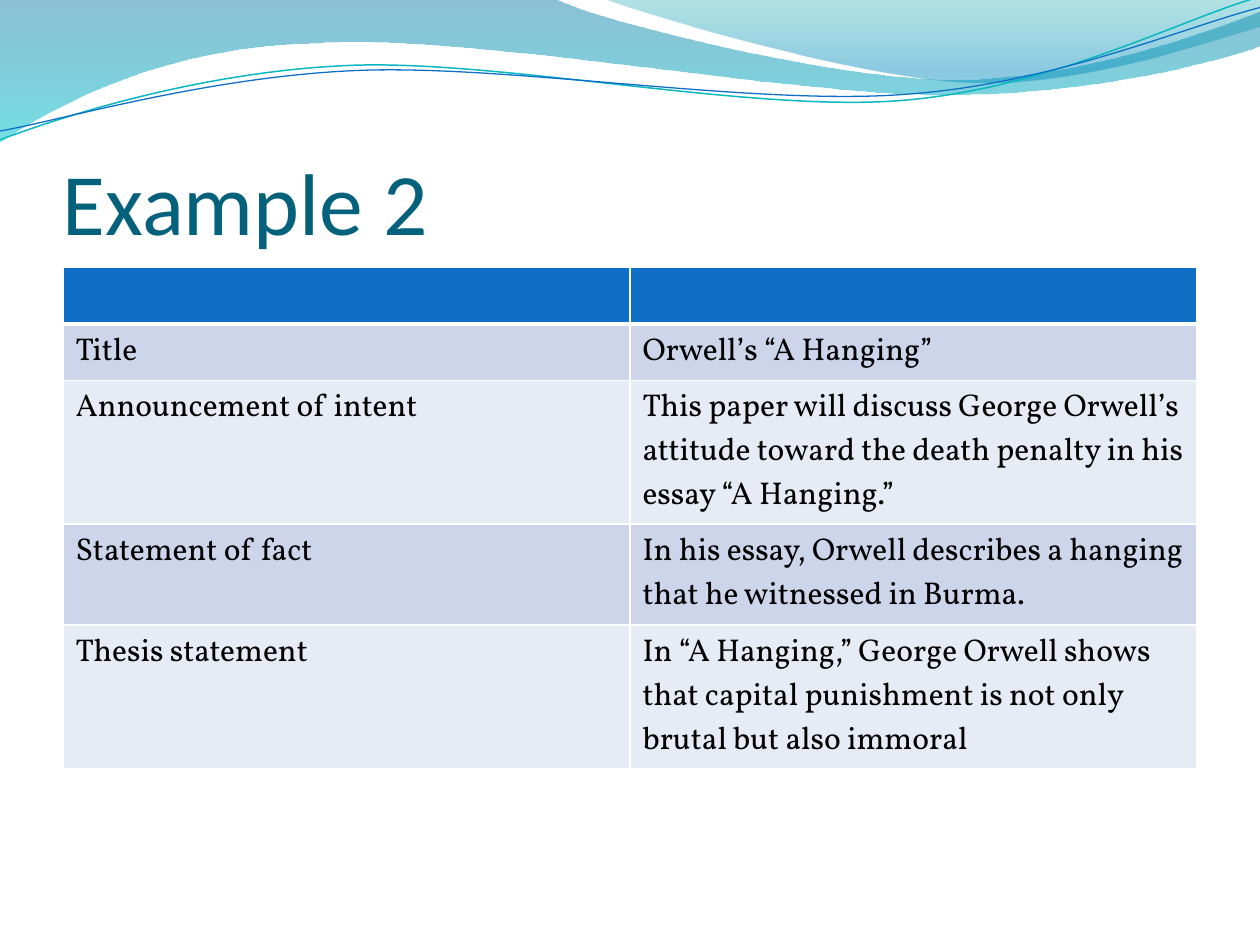
import pptx
import pptx.util
import pptx.dml.color
import pptx.enum.text
import pptx.oxml
import pptx.oxml.ns

RGB = pptx.dml.color.RGBColor
Inch = pptx.util.Inches
Pt = pptx.util.Pt
qn = pptx.oxml.ns.qn

BLUE = RGB(0x0F, 0x6F, 0xC6)
TEAL = RGB(0x0A, 0xB8, 0xBF)
TITLE = RGB(0x04, 0x61, 0x7B)
BLACK = RGB(0, 0, 0)
WHITE = RGB(255, 255, 255)
DARK = RGB(0xCC, 0xD5, 0xEA)
LIGHT = RGB(0xE7, 0xEB, 0xF5)

WIDE, HIGH = 10, 7.5
EDGE = WIDE * 0.05

HEAD = {"name": "Calibri", "size": Pt(50)}
BODY = {"name": "Vollkorn", "size": Pt(18)}

# Outlines in inches: a pair is a straight step, six numbers are a Bézier curve
WAVE = [(0, 0), (4.4, -0.01), (4.76, 0.17, 6.64, 0.63, 7.58, 0.63),
        (8.53, 0.63, 9.58, 0.26, 10, 0.09), (10.01, 0.36),
        (9.83, 0.44, 8.7, 0.76, 7.46, 0.75),
        (6.22, 0.75, 3.82, 0.28, 2.57, 0.34),
        (1.29, 0.36, 0.46, 0.83, -0.01, 1.13), (0, 0)]
CREST = [(4.79, -0.01), (5.09, 0.11, 6.82, 0.62, 7.69, 0.65),
         (8.56, 0.69, 9.61, 0.32, 10, 0.21), (10, 0), (4.79, -0.01)]
UPPER = [(0, 1.11), (0.48, 0.93, 1.58, 0.57, 2.77, 0.52),
         (3.95, 0.47, 5.93, 0.89, 7.13, 0.8),
         (8.33, 0.71, 9.38, 0.15, 9.98, -0.02)]
LOWER = [(0, 1.04), (0.47, 0.96, 1.64, 0.61, 2.83, 0.56),
         (4.03, 0.51, 5.97, 0.84, 7.17, 0.75),
         (8.36, 0.67, 9.41, 0.21, 10, 0.06)]

# Gradient stops: position, colour, opacity in percent
DEEP = [(0, RGB(0, 0x74, 0xA1), 45), (1, RGB(0, 0xC6, 0xCF), 55)]
PALE = [(0, RGB(0, 0xA1, 0xA9), 30), (0.8, RGB(0, 0x8B, 0xBF), 45)]

# Table rows: height, then the texts
ROWS = [
    (0.45, "", ""),
    (0.45, "Title", "Orwell’s “A Hanging”"),
    (1.14, "Announcement of intent",
     "This paper will discuss George Orwell’s attitude toward the death "
     "penalty in his essay “A Hanging.”"),
    (0.8, "Statement of fact",
     "In his essay, Orwell describes a hanging that he witnessed in Burma."),
    (1.14, "Thesis statement",
     "In “A Hanging,” George Orwell shows that capital punishment is not "
     "only brutal but also immoral"),
]


def put(item, form):
    for key, value in form.items():
        setattr(item, key, value)


def write(para, text, form, color):
    run = para.add_run()
    run.text = text
    put(run.font, form)
    run.font.color.rgb = color


def bend(shape, steps):
    """Join each three line steps that stand for a curve into one curve."""
    lines = iter(list(shape._element.iter(qn("a:lnTo"))))
    for step in steps[1:]:
        head = next(lines)
        if len(step) == 6:
            head.tag = qn("a:cubicBezTo")
            for _ in range(2):
                tail = next(lines)
                head.append(tail[0])
                tail.getparent().remove(tail)


def draw(slide, steps, close):
    first, *rest = [(Inch(step[i]), Inch(step[i + 1]))
                    for step in steps for i in range(0, len(step), 2)]
    pen = slide.shapes.build_freeform(*first, scale=1.0)
    pen.add_line_segments(rest, close=close)
    shape = pen.convert_to_shape()
    shape.shadow.inherit = False
    bend(shape, steps)
    return shape


def add_band(slide, steps, stops):
    shape = draw(slide, steps, True)
    shape.line.fill.background()
    shape.fill.gradient()
    shape.fill.gradient_angle = 270
    for stop, (place, color, _) in zip(shape.fill.gradient_stops, stops):
        stop.position = place
        stop.color.rgb = color
    tints = shape._element.spPr.iter(qn("a:srgbClr"))
    for tint, (_, _, share) in zip(tints, stops):
        alpha = pptx.oxml.parse_xml(
            f'<a:alpha {pptx.oxml.ns.nsdecls("a")} val="{share * 1000}"/>')
        tint.append(alpha)


def add_curve(slide, steps, color, width):
    shape = draw(slide, steps, False)
    shape.fill.background()
    shape.line.color.rgb = color
    shape.line.width = Pt(width)


def add_title(slide, text):
    box = slide.shapes.add_textbox(Inch(EDGE), Inch(0.76),
                                   Inch(WIDE - 2 * EDGE), Inch(HIGH / 6))
    frame = box.text_frame
    put(frame, {"word_wrap": True, "margin_left": 0, "margin_right": 0,
                "margin_top": Inch(0.05), "margin_bottom": 0,
                "vertical_anchor": pptx.enum.text.MSO_ANCHOR.BOTTOM})
    write(frame.paragraphs[0], text, HEAD, TITLE)


def add_edges(cell, sides):
    props = cell._tc.get_or_add_tcPr()
    for spot, (side, width) in enumerate(sides.items()):
        props.insert(spot, pptx.oxml.parse_xml(
            f'<a:{side} {pptx.oxml.ns.nsdecls("a")} w="{Pt(width)}">'
            f'<a:solidFill><a:srgbClr val="{WHITE}"/></a:solidFill>'
            f'</a:{side}>'))


def add_grid(slide, rows):
    grid = slide.shapes.add_table(
        len(rows), len(rows[0]) - 1, Inch(EDGE), Inch(2.12),
        Inch(WIDE - 2 * EDGE), Inch(sum(row[0] for row in rows))).table
    for r, (height, *texts) in enumerate(rows):
        grid.rows[r].height = Inch(height)
        for c, text in enumerate(texts):
            cell = grid.cell(r, c)
            cell.fill.solid()
            cell.fill.fore_color.rgb = (
                BLUE if r == 0 else DARK if r % 2 else LIGHT)
            add_edges(cell, {"lnL": 1, "lnR": 1, "lnT": 3 if r == 1 else 1,
                             "lnB": 1 if r else 3})
            if text:
                write(cell.text_frame.paragraphs[0], text, BODY, BLACK)


def main():
    deck = pptx.Presentation()
    put(deck, {"slide_width": Inch(WIDE), "slide_height": Inch(HIGH)})
    slide = deck.slides.add_slide(deck.slide_layouts[6])

    # Waves along the top
    add_band(slide, WAVE, DEEP)
    add_band(slide, CREST, PALE)
    add_curve(slide, UPPER, TEAL, 0.85)
    add_curve(slide, LOWER, BLUE, 0.75)

    # Heading and table
    add_title(slide, "Example 2")
    add_grid(slide, ROWS)
    deck.save("out.pptx")


if __name__ == "__main__":
    main()
